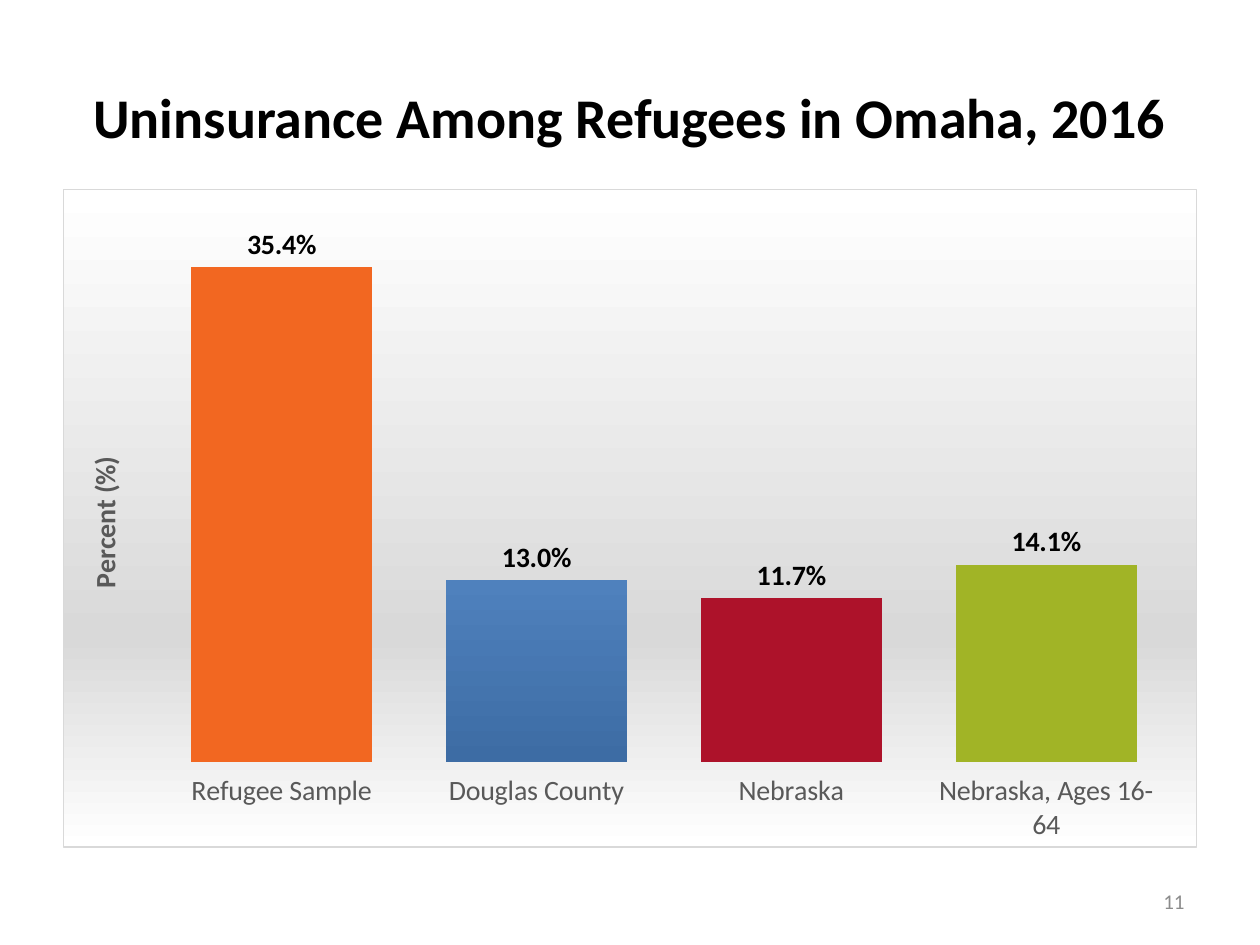
"""Builds the slide on uninsurance among refugees in Omaha."""
from lxml.etree import fromstring
from pptx import Presentation
from pptx.chart.data import CategoryChartData
from pptx.dml.color import RGBColor
from pptx.enum.chart import XL_CHART_TYPE as ChartType
from pptx.enum.chart import XL_LABEL_POSITION as LabelPos
from pptx.enum.chart import XL_TICK_LABEL_POSITION as TickPos
from pptx.enum.chart import XL_TICK_MARK as TickMark
from pptx.enum.text import MSO_ANCHOR as Anchor
from pptx.enum.text import PP_ALIGN as Align
from pptx.util import Cm, Pt

TITLE = "Uninsurance Among Refugees in Omaha, 2016"
PAGE = "11"
AXIS_TITLE = "Percent (%)"
RATES = [
    ("Refugee Sample", 0.354),
    ("Douglas County", 0.13),
    ("Nebraska", 0.117),
    ("Nebraska, Ages 16-64", 0.141),
]
FONT = "Calibri"
BLACK = RGBColor(0x00, 0x00, 0x00)
GREY = RGBColor(0x59, 0x59, 0x59)
PAGE_GREY = RGBColor(0x8C, 0x8C, 0x8C)
WHITE = RGBColor(0xFF, 0xFF, 0xFF)
SILVER = RGBColor(0xD9, 0xD9, 0xD9)
BLUES = (RGBColor(0x4F, 0x81, 0xBD), RGBColor(0x3D, 0x6C, 0xA4))
POINT_COLORS = {
    0: RGBColor(0xF2, 0x67, 0x21),
    2: RGBColor(0xAD, 0x12, 0x2A),
    3: RGBColor(0xA1, 0xB4, 0x26),
}
BACKDROP = [(0, WHITE), (68, SILVER), (100, WHITE)]
PLOT_AREA = {"x": 0.08, "y": 0.02, "w": 0.9, "h": 0.85}
NS = ('xmlns:c="http://schemas.openxmlformats.org/drawingml/2006/chart" '
      'xmlns:a="http://schemas.openxmlformats.org/drawingml/2006/main"')


def style(font, size, color, bold=False):
    font.name, font.size, font.bold = FONT, Pt(size), bold
    font.color.rgb = color


def add_text(s, box, text, align, size, color, bold=False):
    tf = s.shapes.add_textbox(*map(Cm, box)).text_frame
    tf.word_wrap = True
    tf.vertical_anchor = Anchor.MIDDLE
    p = tf.paragraphs[0]
    p.alignment = align
    r = p.add_run()
    r.text = text
    style(r.font, size, color, bold)


def set_backdrop(chart):
    stops = "".join(
        f'<a:gs pos="{pos * 1000}"><a:srgbClr val="{color}"/></a:gs>'
        for pos, color in BACKDROP)
    chart.element.find("{*}chart").addnext(fromstring(
        f'<c:spPr {NS}><a:gradFill><a:gsLst>{stops}</a:gsLst>'
        f'<a:lin ang="5400000" scaled="0"/></a:gradFill>'
        f'<a:ln w="{Pt(0.75)}"><a:solidFill><a:srgbClr val="{SILVER}"/>'
        f'</a:solidFill></a:ln></c:spPr>'))


def set_plot_area(chart):
    plot_area = chart.element.find("{*}chart/{*}plotArea")
    for layout in plot_area.findall("{*}layout"):
        plot_area.remove(layout)
    modes = "".join(f'<c:{k}Mode val="edge"/>' for k in "xy")
    sizes = "".join(f'<c:{k} val="{v}"/>' for k, v in PLOT_AREA.items())
    plot_area.insert(0, fromstring(
        f'<c:layout {NS}><c:manualLayout><c:layoutTarget val="inner"/>'
        f'{modes}{sizes}</c:manualLayout></c:layout>'))


def style_axes(chart):
    cat = chart.category_axis
    cat.major_tick_mark = cat.minor_tick_mark = TickMark.NONE
    cat.tick_label_position = TickPos.LOW
    cat.format.line.fill.background()
    style(cat.tick_labels.font, 16, GREY)

    val = chart.value_axis
    val.minimum_scale, val.maximum_scale = 0, 0.4
    val.has_major_gridlines = False
    val.tick_labels.number_format = "0.0%"
    val.tick_labels.number_format_is_linked = False
    tf = val.axis_title.text_frame
    tf._txBody.bodyPr.set("rot", "-5400000")
    tf._txBody.bodyPr.set("vert", "horz")
    r = tf.paragraphs[0].add_run()
    r.text = AXIS_TITLE
    style(r.font, 16, GREY, True)
    val.visible = False


def style_bars(plot):
    plot.gap_width = 41
    plot.vary_by_categories = False
    series = plot.series[0]
    fill = series.format.fill
    fill.gradient()
    fill.gradient_angle = 270
    for stop, pos, color in zip(fill.gradient_stops, (0, 1), BLUES):
        stop.position = pos
        stop.color.rgb = color
    for i, color in POINT_COLORS.items():
        fill = series.points[i].format.fill
        fill.solid()
        fill.fore_color.rgb = color
    labels = series.data_labels
    labels.show_value = True
    labels.position = LabelPos.OUTSIDE_END
    labels.number_format = "0.0%"
    labels.number_format_is_linked = False
    style(labels.font, 16, BLACK, True)


def add_rates_chart(s):
    data = CategoryChartData(number_format="0.0%")
    data.categories = [name for name, _ in RATES]
    data.add_series("Series 1", [rate for _, rate in RATES])
    box = map(Cm, (1.27, 3.81, 22.86, 13.28))
    chart = s.shapes.add_chart(ChartType.COLUMN_CLUSTERED, *box, data).chart
    chart.has_title = chart.has_legend = False
    style(chart.font, 16, BLACK)
    set_backdrop(chart)
    set_plot_area(chart)
    style_axes(chart)
    style_bars(chart.plots[0])


def main():
    prs = Presentation()
    prs.slide_width, prs.slide_height = Cm(25.4), Cm(19.05)
    s = prs.slides.add_slide(prs.slide_layouts[6])
    add_text(s, (1.27, 0.76, 22.86, 3.18), TITLE, Align.CENTER, 32, BLACK, True)
    add_text(s, (18.2, 17.66, 5.93, 1.01), PAGE, Align.RIGHT, 12, PAGE_GREY)
    add_rates_chart(s)
    prs.save("out.pptx")


if __name__ == "__main__":
    main()
